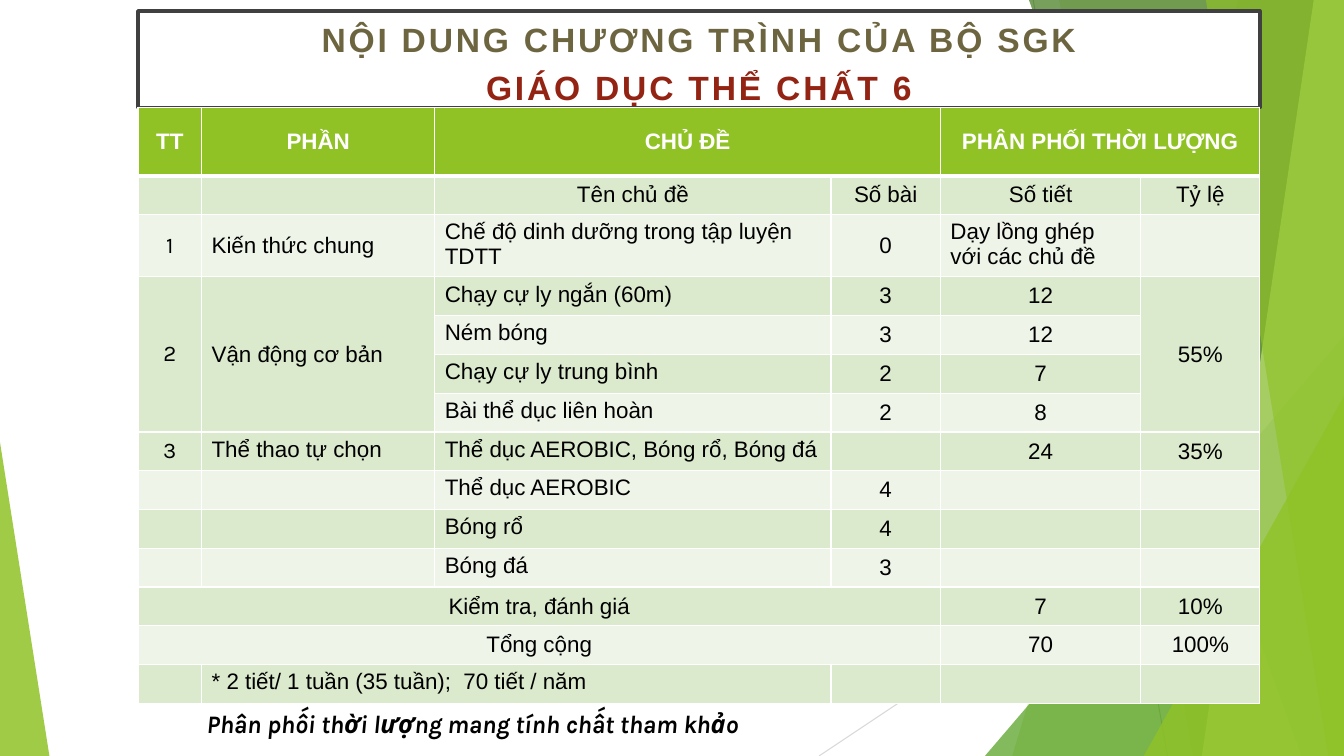
from lxml.etree import SubElement
from pptx import Presentation
from pptx.dml.color import RGBColor
from pptx.enum.shapes import MSO_CONNECTOR, MSO_SHAPE
from pptx.enum.text import MSO_ANCHOR, PP_ALIGN
from pptx.oxml import parse_xml
from pptx.oxml.ns import nsdecls, qn
from pptx.util import Pt

WHITE = RGBColor(0xFF, 0xFF, 0xFF)
BLACK = RGBColor(0, 0, 0)
LIME = RGBColor(0x90, 0xC2, 0x26)
GREEN = RGBColor(0x54, 0xA0, 0x21)
DARK = RGBColor(0x3F, 0x78, 0x19)
PALE = RGBColor(0xC0, 0xE4, 0x74)
BANDS = [RGBColor(0xEE, 0xF4, 0xE8), RGBColor(0xDB, 0xE9, 0xCD)]
FRAME = RGBColor(0x40, 0x40, 0x40)
OLIVE = RGBColor(0x6D, 0x65, 0x40)
RED = RGBColor(0x93, 0x23, 0x13)
GREY = RGBColor(0xBF, 0xBF, 0xBF)
SILVER = RGBColor(0xD9, 0xD9, 0xD9)

WIDE, HIGH = 960, 540
BODY = {"size": Pt(16), "name": "Arial", "bold": False}
HEAD = {**BODY, "bold": True}
TITLE = {**HEAD, "size": Pt(24)}
NOTE = {"size": Pt(18), "name": "Karla", "bold": True, "italic": True}

COLS = [45.4, 166.6, 283, 78.2, 143.2, 85]
ROWS = [49, 27.7, 44.6] + [27.7] * 11
MERGES = [(0, 2, 0, 3), (0, 4, 0, 5), (3, 0, 6, 0), (3, 1, 6, 1),
          (3, 5, 6, 5), (11, 0, 11, 3), (12, 0, 12, 3), (13, 1, 13, 2)]
CELLS = [
    ["TT", "PHẦN", "CHỦ ĐỀ", "", "PHÂN PHỐI THỜI LƯỢNG", ""],
    ["", "", "Tên chủ đề", "Số bài", "Số tiết", "Tỷ lệ"],
    ["1", "Kiến thức chung", "Chế độ dinh dưỡng trong tập luyện TDTT", "0",
     "Dạy lồng ghép với các chủ đề", ""],
    ["2", "Vận động cơ bản", "Chạy cự ly ngắn (60m)", "3", "12", "55%"],
    ["", "", "Ném bóng", "3", "12", ""],
    ["", "", "Chạy cự ly trung bình", "2", "7", ""],
    ["", "", "Bài thể dục liên hoàn", "2", "8", ""],
    ["3", "Thể thao tự chọn", "Thể dục AEROBIC, Bóng rổ, Bóng đá", "", "24", "35%"],
    ["", "", "Thể dục AEROBIC", "4", "", ""],
    ["", "", "Bóng rổ", "4", "", ""],
    ["", "", "Bóng đá", "3", "", ""],
    ["Kiểm tra, đánh giá", "", "", "", "7", "10%"],
    ["Tổng cộng", "", "", "", "70", "100%"],
    ["", "* 2 tiết/ 1 tuần (35 tuần);  70 tiết / năm", "", "", "", ""],
]
TOP = {(r, 2) for r in range(2, 11)} | {(2, 4), (7, 1), (13, 1)}
LEFT = TOP | {(2, 1), (3, 1)}


def write(para, text, look, color):
    run = para.add_run()
    run.text = text
    for key, value in look.items():
        setattr(run.font, key, value)
    run.font.color.rgb = color
    return run


def tint(shape, color, alpha):
    """Fill without outline or shadow, at the given percent of opacity."""
    shape.shadow.inherit = False
    shape.fill.solid()
    shape.fill.fore_color.rgb = color
    shape.line.fill.background()
    tone = shape.fill._xPr.find(qn("a:solidFill"))[0]
    SubElement(tone, qn("a:alpha")).set("val", str(alpha * 1000))


def shard(shapes, box, tip, foot, color, alpha):
    """Band from the top edge to the bottom edge, flush with the box's right side."""
    x, y, w, h = box
    pen = shapes.build_freeform(Pt(x + tip), Pt(y))
    pen.add_line_segments([(Pt(x + w), Pt(y)), (Pt(x + w), Pt(y + h)),
                           (Pt(x + foot), Pt(y + h))], close=True)
    tint(pen.convert_to_shape(), color, alpha)


def wedge(shapes, box, peak, color, alpha):
    shape = shapes.add_shape(MSO_SHAPE.ISOSCELES_TRIANGLE, *map(Pt, box))
    shape.adjustments[0] = peak
    tint(shape, color, alpha)


def rule(shapes, ends, color):
    line = shapes.add_connector(MSO_CONNECTOR.STRAIGHT, *map(Pt, ends))
    line.line.color.rgb = color
    line.line.width = Pt(0.75)
    SubElement(line._element.spPr, qn("a:effectLst"))


def backdrop(shapes, box):
    x, y, w, h = box
    end, base = x + w, y + h
    rule(shapes, (end - 222, y, end - 126, base), GREY)
    rule(shapes, (end, y + 290, end - 375, base), SILVER)

    def shards(specs):
        for tip, foot, color, alpha in specs:
            shard(shapes, (end, y, 0, h), tip, foot, color, alpha)

    shards([(-75.6, -237, LIME, 30), (-203.5, -108, LIME, 20)])
    wedge(shapes, (end - 256.5, y + 240, 256.5, h - 240), 1, GREEN, 72)
    shards([(-225, -30.5, DARK, 70), (-21.6, -101.5, PALE, 70),
            (-98.6, -11, LIME, 65)])
    wedge(shapes, (end - 143, y + 283, 143, h - 283), 1, LIME, 80)
    wedge(shapes, (x, y + 316, 35.3, h - 316), 0, LIME, 85)


def heading(shapes, box):
    shape = shapes.add_shape(MSO_SHAPE.RECTANGLE, *map(Pt, box))
    shape.shadow.inherit = False
    shape.fill.solid()
    shape.fill.fore_color.rgb = WHITE
    shape.line.color.rgb = FRAME
    shape.line.width = Pt(2.5)
    frame = shape.text_frame
    frame.word_wrap = True
    frame.vertical_anchor = MSO_ANCHOR.MIDDLE
    for side in ("left", "top", "right", "bottom"):
        setattr(frame, "margin_" + side, Pt(14.4))
    lines = [("NỘI DUNG CHƯƠNG TRÌNH CỦA BỘ SGK", OLIVE),
             ("GIÁO DỤC THỂ CHẤT 6", RED)]
    for i, (text, color) in enumerate(lines):
        para = frame.add_paragraph() if i else frame.paragraphs[0]
        para.alignment = PP_ALIGN.CENTER
        para.line_spacing = 1.2
        run = write(para, text, TITLE, color)
        run._r.get_or_add_rPr().set("spc", "200")


def edge(cell, row):
    """White cell borders, thick between the header and the body."""
    thick = {(0, "B"), (1, "T")}
    for i, side in enumerate("LRTB"):
        width = Pt(3 if (row, side) in thick else 1)
        cell._tc.get_or_add_tcPr().insert(i, parse_xml(
            f'<a:ln{side} {nsdecls("a")} w="{width}"><a:solidFill>'
            f'<a:srgbClr val="{WHITE}"/></a:solidFill></a:ln{side}>'))


def fill_cell(cell, row, col, text):
    cell.fill.solid()
    cell.fill.fore_color.rgb = BANDS[row % 2] if row else LIME
    edge(cell, row)
    if not text:
        cell.margin_top = cell.margin_bottom = 0
        return
    cell.vertical_anchor = MSO_ANCHOR.TOP if (row, col) in TOP else MSO_ANCHOR.MIDDLE
    para = cell.text_frame.paragraphs[0]
    para.alignment = PP_ALIGN.LEFT if (row, col) in LEFT else PP_ALIGN.CENTER
    look = BODY if row else HEAD
    if col == 0 and text.isdigit():
        look = {**BODY, "name": "Karla"}
    write(para, text, look, BLACK if row else WHITE)


def schedule(shapes, box):
    table = shapes.add_table(len(ROWS), len(COLS), *map(Pt, box)).table
    table.first_row = table.horz_banding = False
    for col, width in zip(table.columns, COLS):
        col.width = Pt(width)
    for row, height in zip(table.rows, ROWS):
        row.height = Pt(height)
    for r, texts in enumerate(CELLS):
        for c, text in enumerate(texts):
            fill_cell(table.cell(r, c), r, c, text)
    for top, left, low, right in MERGES:
        table.cell(top, left).merge(table.cell(low, right))


def footnote(shapes, box):
    frame = shapes.add_textbox(*map(Pt, box)).text_frame
    frame.word_wrap = True
    write(frame.paragraphs[0], "Phân phối thời lượng mang tính chất tham khảo",
          NOTE, BLACK)


def main():
    deck = Presentation()
    deck.slide_width, deck.slide_height = Pt(WIDE), Pt(HIGH)
    shapes = deck.slides.add_slide(deck.slide_layouts[6]).shapes
    backdrop(shapes, (0, 0, WIDE, HIGH))
    heading(shapes, (98.6, 7.9, 801.4, 69))
    schedule(shapes, (98.6, 76.5, sum(COLS), sum(ROWS)))
    footnote(shapes, (140.5, 502.5, 494.5, 29))
    deck.save("out.pptx")


if __name__ == "__main__":
    main()
